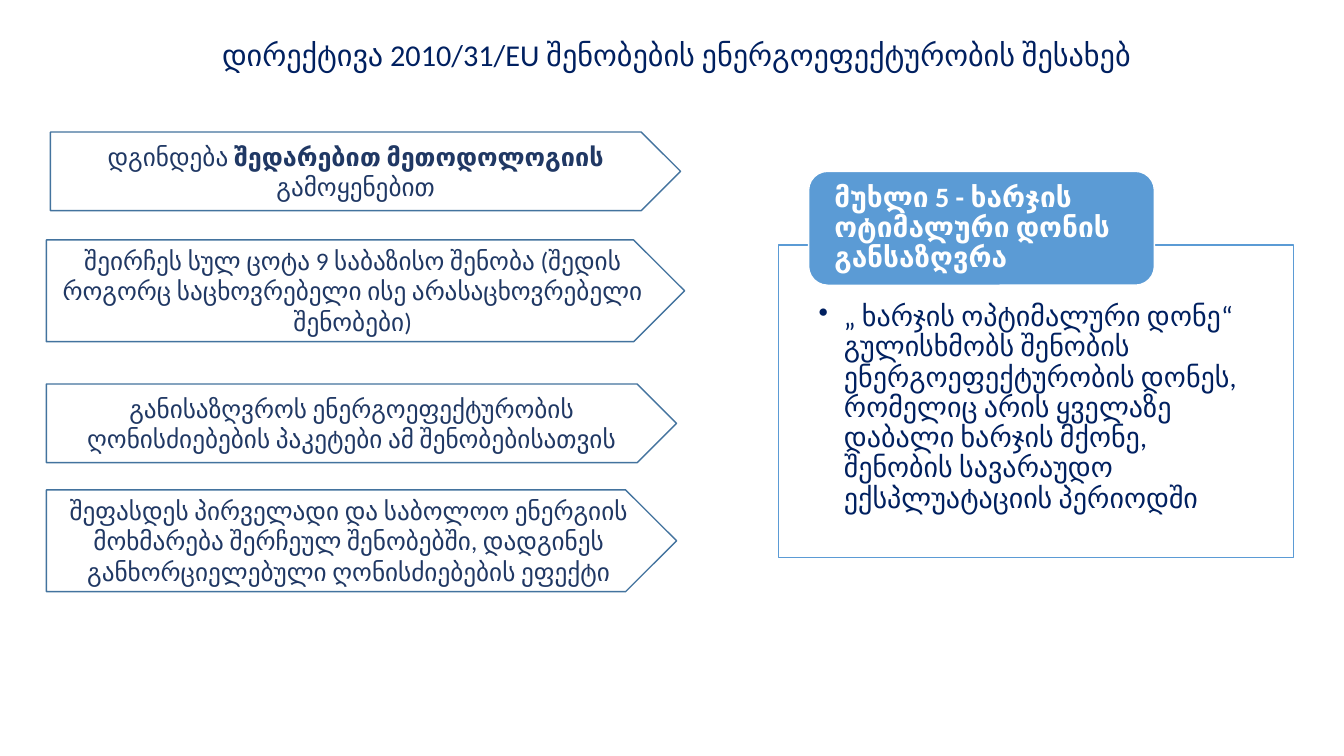
from dataclasses import dataclass
from lxml import etree
from pptx import Presentation
from pptx.dml.color import RGBColor as RGB
from pptx.enum.shapes import MSO_SHAPE as Shape
from pptx.enum.text import MSO_ANCHOR as Anchor, PP_ALIGN as Align
from pptx.oxml.ns import qn
from pptx.util import Inches, Pt


@dataclass(frozen=True)
class Theme:
    font: str = "Calibri"
    navy: str = "002060"
    ink: str = "203864"
    blue: str = "5B9BD5"
    edge: str = "43739E"
    white: str = "FFFFFF"
    title: float = 21.6
    card: float = 20
    step: float = 18


THEME = Theme()

STEPS = [
    ((0.5, 1.31, 6.25, 0.78),
     ["დგინდება ", "შედარებით მეთოდოლოგიის ", "გამოყენებით"]),
    ((0.46, 2.38, 6.33, 1.01),
     ["შეირჩეს სულ ცოტა 9 საბაზისო შენობა (შედის როგორც საცხოვრებელი ისე არასაცხოვრებელი შენობები)"]),
    ((0.46, 3.81, 6.25, 0.78),
     ["განისაზღვროს ენერგოეფექტურობის ღონისძიებების პაკეტები ამ შენობებისათვის"]),
    ((0.46, 4.86, 6.25, 1.01),
     ["შეფასდეს პირველადი და საბოლოო ენერგიის მოხმარება შერჩეულ შენობებში, დადგინეს განხორციელებული ღონისძიებების ეფექტი"]),
]


def add_box(slide, kind, box, fill, line):
    shape = slide.shapes.add_shape(kind, *map(Inches, box))
    shape.shadow.inherit = False
    shape.fill.solid()
    shape.fill.fore_color.rgb = RGB.from_string(fill)
    shape.line.color.rgb = RGB.from_string(line)
    shape.line.width = Pt(1)
    return shape


def set_frame(shape, anchor, pads):
    frame = shape.text_frame
    frame.word_wrap = True
    frame.vertical_anchor = anchor
    left, top, right, base = map(Inches, pads)
    frame.margin_left, frame.margin_right = left, right
    frame.margin_top, frame.margin_bottom = top, base
    return frame.paragraphs[0]


def style(para, size, color, align, space=1.0):
    para.alignment = align
    para.line_spacing = space
    for run in para.runs:
        run.font.name = THEME.font
        run.font.size = Pt(size)
        run.font.color.rgb = RGB.from_string(color)


def add_bullet(para, indent):
    props = para._p.get_or_add_pPr()
    props.set("marL", str(Inches(indent)))
    props.set("indent", str(-Inches(indent)))
    etree.SubElement(props, qn("a:buChar"), char="•")


def add_title(slide, box):
    shape = slide.shapes.add_textbox(*map(Inches, box))
    para = set_frame(shape, Anchor.TOP, (0.1, 0, 0.1, 0))
    para.text = "დირექტივა 2010/31/EU შენობების ენერგოეფექტურობის შესახებ"
    style(para, THEME.title, THEME.navy, Align.CENTER, 0.9)


def add_step(slide, box, parts):
    shape = add_box(slide, Shape.PENTAGON, box, THEME.white, THEME.edge)
    para = set_frame(shape, Anchor.MIDDLE, (0.1, 0.05, 0.1, 0.05))
    for i, part in enumerate(parts):
        run = para.add_run()
        run.text = part
        run.font.bold = i == 1
    style(para, THEME.step, THEME.ink, Align.CENTER)


def add_card(slide, box):
    left, top, width, height = box
    body = add_box(slide, Shape.RECTANGLE, box, THEME.white, THEME.blue)
    para = set_frame(body, Anchor.TOP, (0.4, 0.57, 0.4, 0.16))
    para.text = ("„ ხარჯის ოპტიმალური დონე“ გულისხმობს შენობის ენერგოეფექტურობის დონეს, "
                 "რომელიც არის ყველაზე დაბალი ხარჯის მქონე, შენობის სავარაუდო "
                 "ექსპლუატაციის პერიოდში")
    add_bullet(para, 0.25)
    style(para, THEME.card, THEME.navy, Align.LEFT, 0.9)

    place = (left + 0.3, top - 0.73, 3.43, 1.13)
    tab = add_box(slide, Shape.ROUNDED_RECTANGLE, place, THEME.blue, THEME.white)
    para = set_frame(tab, Anchor.MIDDLE, (0.2, 0.05, 0.2, 0.05))
    para.text = "მუხლი 5 - ხარჯის ოტიმალური დონის განსაზღვრა"
    style(para, THEME.card, THEME.white, Align.LEFT, 0.9)
    para.runs[0].font.bold = True


def main():
    deck = Presentation()
    deck.slide_width, deck.slide_height = Inches(13.33), Inches(7.5)
    slide = deck.slides.add_slide(deck.slide_layouts[6])
    add_title(slide, (0.59, 0.4, 12.24, 0.64))
    add_card(slide, (7.72, 2.43, 5.11, 3.1))
    for box, parts in STEPS:
        add_step(slide, box, parts)
    deck.save("out.pptx")


if __name__ == "__main__":
    main()
